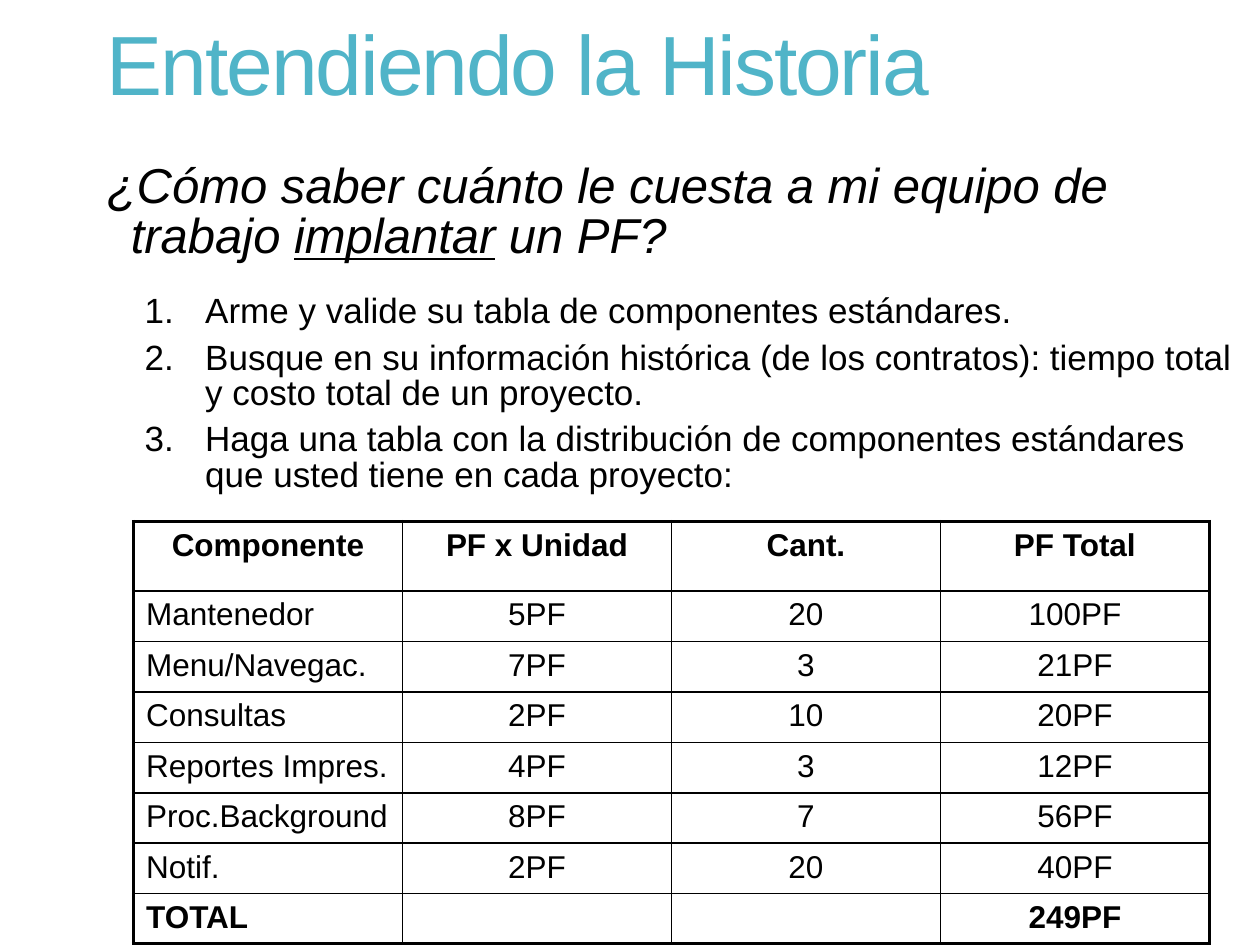
from lxml.etree import SubElement
from pptx import Presentation
from pptx.dml.color import RGBColor
from pptx.enum.text import MSO_ANCHOR as Anchor, PP_ALIGN as Align
from pptx.oxml.ns import qn
from pptx.util import Inches, Pt

BLACK = RGBColor(0x00, 0x00, 0x00)
TEAL = RGBColor(0x50, 0xB4, 0xC8)
FONT = "Arial"
THIN, THICK = 1, 2.25

STEPS = [
    "Arme y valide su tabla de componentes estándares.",
    "Busque en su información histórica (de los contratos): tiempo total y costo total de un proyecto.",
    "Haga una tabla con la distribución de componentes estándares que usted tiene en cada proyecto:",
]
ROWS = [
    ("Componente", "PF x Unidad", "Cant.", "PF Total"),
    ("Mantenedor", "5PF", "20", "100PF"),
    ("Menu/Navegac.", "7PF", "3", "21PF"),
    ("Consultas", "2PF", "10", "20PF"),
    ("Reportes Impres.", "4PF", "3", "12PF"),
    ("Proc.Background", "8PF", "7", "56PF"),
    ("Notif.", "2PF", "20", "40PF"),
    ("TOTAL", "", "", "249PF"),
]


def add_run(p, text, size, color=BLACK, bold=False, italic=False, underline=False, spacing=None):
    r = p.add_run()
    r.text = text
    font = r.font
    font.name, font.size, font.bold = FONT, Pt(size), bold
    font.italic, font.underline = italic, underline
    font.color.rgb = color
    if spacing is not None:
        r._r.get_or_add_rPr().set("spc", str(int(spacing * 100)))


def add_textbox(slide, left, top, width, height, anchor=Anchor.TOP):
    sp = slide.shapes.add_textbox(Inches(left), Inches(top), Inches(width), Inches(height))
    tf = sp.text_frame
    tf.word_wrap = True
    tf.vertical_anchor = anchor
    return tf


def format_paragraph(p, line_spacing, before=0, after=0, left=0, hanging=0, numbered=False):
    p.line_spacing = line_spacing
    p.space_before, p.space_after = Pt(before), Pt(after)
    pPr = p._p.get_or_add_pPr()
    pPr.set("marL", str(Inches(left)))
    pPr.set("indent", str(-Inches(hanging)))
    if numbered:
        SubElement(pPr, qn("a:buFont"), typeface=FONT)
        SubElement(pPr, qn("a:buAutoNum"), type="arabicPeriod")


def add_title(slide):
    p = add_textbox(slide, 0.75, 0, 8.5, 1.08, Anchor.MIDDLE).paragraphs[0]
    format_paragraph(p, 0.9)
    add_run(p, "Entendiendo la Historia", 48, color=TEAL, spacing=-1.2)


def add_body(slide):
    tf = add_textbox(slide, 0.75, 1.25, 9.25, 2.89)
    p = tf.paragraphs[0]
    format_paragraph(p, 0.85, before=13, after=12, left=0.19, hanging=0.19)
    add_run(p, "¿Cómo saber cuánto le cuesta a mi equipo de trabajo ", 28, italic=True)
    add_run(p, "implantar", 28, italic=True, underline=True)
    add_run(p, " un PF?", 28, italic=True)
    for step in STEPS:
        p = tf.add_paragraph()
        format_paragraph(p, 0.85, before=6, left=0.78, hanging=0.48, numbered=True)
        add_run(p, step, 20)


def set_border(cell, side, width):
    ln = SubElement(cell._tc.get_or_add_tcPr(), qn(f"a:ln{side}"), w=str(Pt(width)))
    SubElement(SubElement(ln, qn("a:solidFill")), qn("a:srgbClr"), val=str(BLACK))


def add_component_table(slide):
    last_row, last_col = len(ROWS) - 1, len(ROWS[0]) - 1
    frame = slide.shapes.add_table(len(ROWS), len(ROWS[0]), Inches(1.06), Inches(4.14),
                                   Inches(8.54), Inches(3.36))
    table = frame.table
    table.first_row = table.horz_banding = False
    for i, values in enumerate(ROWS):
        table.rows[i].height = Inches(0.55 if i == 0 else 0.4)
        for j, value in enumerate(values):
            cell = table.cell(i, j)
            outer = {"L": j == 0, "R": j == last_col, "T": i == 0, "B": i == last_row}
            for side, is_outer in outer.items():
                set_border(cell, side, THICK if is_outer else THIN)
            cell.fill.background()
            p = cell.text_frame.paragraphs[0]
            p.alignment = Align.LEFT if j == 0 and i > 0 else Align.CENTER
            if value:
                add_run(p, value, 18, bold=i in (0, last_row))


def main():
    prs = Presentation()
    prs.slide_width, prs.slide_height = Inches(10), Inches(7.5)
    slide = prs.slides.add_slide(prs.slide_layouts[6])
    add_title(slide)
    add_body(slide)
    add_component_table(slide)
    prs.save("out.pptx")


if __name__ == "__main__":
    main()
